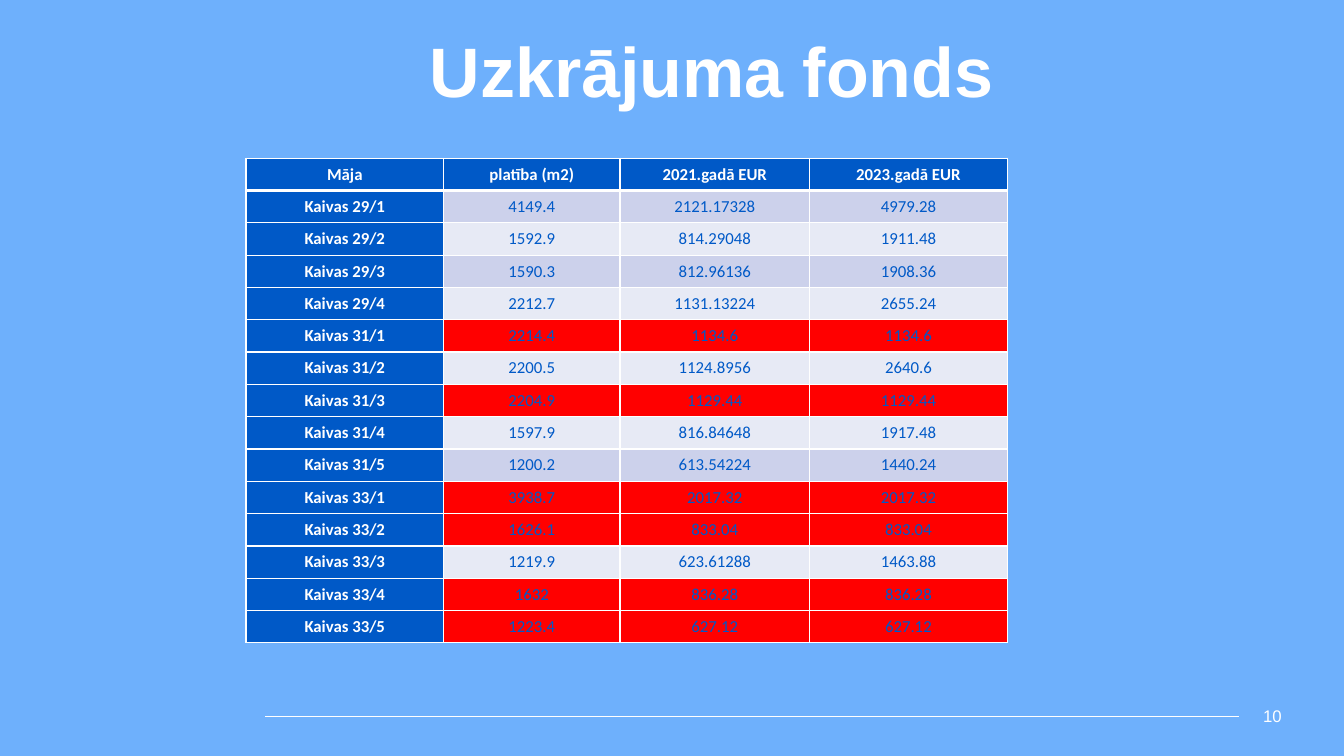
from lxml.etree import SubElement
from pptx import Presentation
from pptx.dml.color import RGBColor
from pptx.enum.shapes import MSO_CONNECTOR
from pptx.enum.text import MSO_ANCHOR, PP_ALIGN
from pptx.oxml import parse_xml
from pptx.oxml.ns import nsdecls, qn
from pptx.util import Inches, Pt

COLOURS = {
    "background": "6EB0FC",
    "white": "FFFFFF",
    "blue": "0059C7",
    "odd band": "CCD1EB",
    "even band": "E7EAF5",
    "unchanged": "FF0000",
}
HEADINGS = ["Māja", "platība (m2)", "2021.gadā EUR", "2023.gadā EUR"]
HOUSES = [
    ("Kaivas 29/1", "4149.4", "2121.17328", "4979.28"),
    ("Kaivas 29/2", "1592.9", "814.29048", "1911.48"),
    ("Kaivas 29/3", "1590.3", "812.96136", "1908.36"),
    ("Kaivas 29/4", "2212.7", "1131.13224", "2655.24"),
    ("Kaivas 31/1", "2214.4", "1134.6", "1134.6"),
    ("Kaivas 31/2", "2200.5", "1124.8956", "2640.6"),
    ("Kaivas 31/3", "2204.9", "1129.44", "1129.44"),
    ("Kaivas 31/4", "1597.9", "816.84648", "1917.48"),
    ("Kaivas 31/5", "1200.2", "613.54224", "1440.24"),
    ("Kaivas 33/1", "3938.7", "2017.32", "2017.32"),
    ("Kaivas 33/2", "1626.1", "833.04", "833.04"),
    ("Kaivas 33/3", "1219.9", "623.61288", "1463.88"),
    ("Kaivas 33/4", "1632", "836.28", "836.28"),
    ("Kaivas 33/5", "1223.4", "627.12", "627.12"),
]
COLUMN_WIDTHS = [1.96, 1.75, 1.88, 1.96]
TABLE_HEIGHT = 4.81


def style_text(paragraph, size, face, colour, bold, align):
    paragraph.alignment = align
    for run in paragraph.runs:
        run.font.size = Pt(size)
        run.font.name = face
        run.font.bold = bold
        run.font.color.rgb = RGBColor.from_string(COLOURS[colour])


def add_borders(cell, top, bottom):
    """Draw white cell borders; top and bottom are widths in points."""
    properties = cell._tc.get_or_add_tcPr()
    sides = [("lnL", 1), ("lnR", 1), ("lnT", top), ("lnB", bottom)]
    for position, (side, width) in enumerate(sides):
        border = parse_xml(
            f'<a:{side} {nsdecls("a")} w="{Pt(width)}"><a:solidFill>'
            f'<a:srgbClr val="{COLOURS["white"]}"/></a:solidFill></a:{side}>'
        )
        properties.insert(position, border)


deck = Presentation()
deck.slide_width, deck.slide_height = Inches(13.33), Inches(7.5)
slide = deck.slides.add_slide(deck.slide_layouts[5])
slide.background.fill.solid()
slide.background.fill.fore_color.rgb = RGBColor.from_string(COLOURS["background"])

footer_rule = slide.shapes.add_connector(
    MSO_CONNECTOR.STRAIGHT, Inches(2.63), Inches(7.11), Inches(12.29), Inches(7.11)
)
footer_rule.line.color.rgb = RGBColor.from_string(COLOURS["white"])
footer_rule.line.width = Pt(0.75)
SubElement(footer_rule._element.spPr, qn("a:effectLst"))

title = slide.shapes.title
title.left, title.top = Inches(4.16), Inches(0.32)
title.width, title.height = Inches(6.74), Inches(1.45)
title.text_frame.text = "Uzkrājuma fonds"
title.text_frame.vertical_anchor = MSO_ANCHOR.TOP
title.text_frame.paragraphs[0].line_spacing = 0.9
style_text(title.text_frame.paragraphs[0], 50, "Arial", "white", True, PP_ALIGN.LEFT)

page_number = slide.shapes.add_textbox(
    Inches(10.99), Inches(6.9), Inches(1.82), Inches(0.4)
).text_frame
page_number.word_wrap = True
page_number.vertical_anchor = MSO_ANCHOR.MIDDLE
page_number.text = "10"
style_text(page_number.paragraphs[0], 12, "Arial", "white", False, PP_ALIGN.RIGHT)

rows = [HEADINGS, *HOUSES]
fund_table = slide.shapes.add_table(
    len(rows), len(HEADINGS), Inches(2.44), Inches(1.57),
    Inches(sum(COLUMN_WIDTHS)), Inches(TABLE_HEIGHT),
).table
for column, width in zip(fund_table.columns, COLUMN_WIDTHS):
    column.width = Inches(width)

for row_index, values in enumerate(rows):
    fund_table.rows[row_index].height = Inches(TABLE_HEIGHT / len(rows))
    if values[2] == values[3]:
        band = "unchanged"
    else:
        band = "odd band" if row_index % 2 else "even band"
    for column_index, value in enumerate(values):
        is_heading = row_index == 0 or column_index == 0
        cell = fund_table.cell(row_index, column_index)
        cell.text_frame.text = value
        cell.vertical_anchor = MSO_ANCHOR.MIDDLE
        cell.margin_left = cell.margin_right = Inches(0.07)
        cell.margin_top = cell.margin_bottom = 0
        cell.fill.solid()
        cell.fill.fore_color.rgb = RGBColor.from_string(
            COLOURS["blue" if is_heading else band]
        )
        style_text(
            cell.text_frame.paragraphs[0], 12, "Calibri",
            "white" if is_heading else "blue", is_heading, PP_ALIGN.CENTER,
        )
        add_borders(cell, 3 if row_index == 1 else 1, 3 if row_index == 0 else 1)

deck.save("out.pptx")
